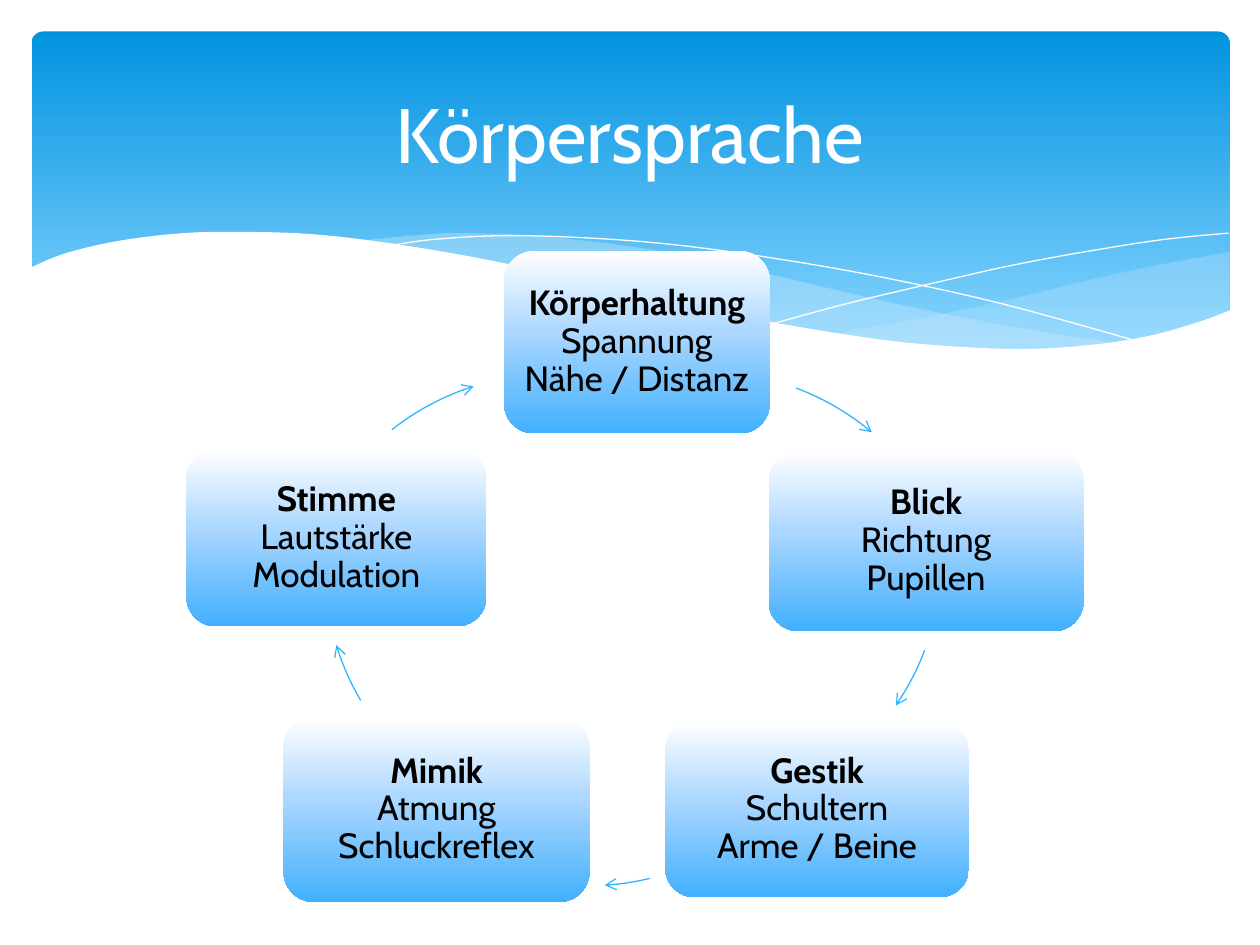
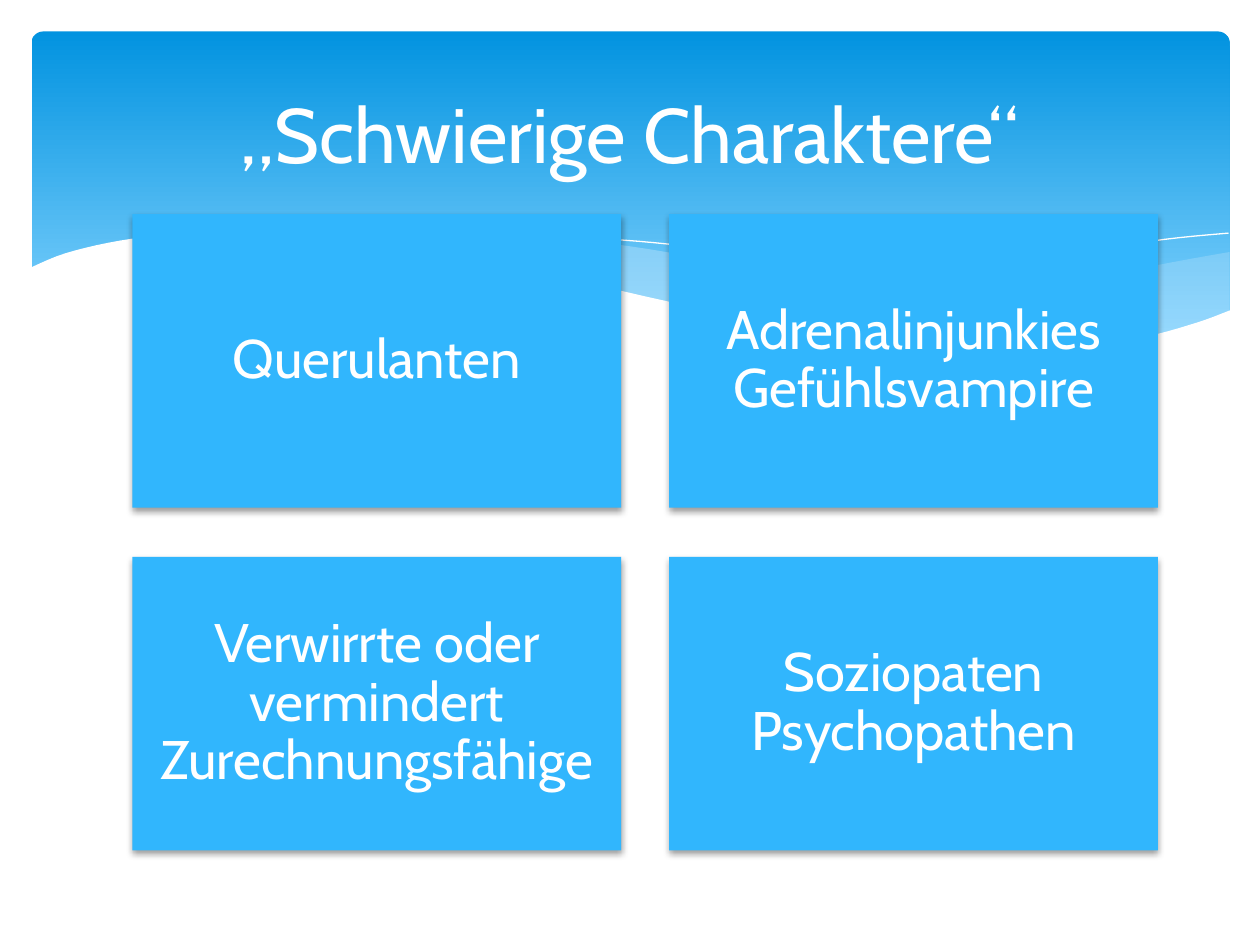
import dataclasses
import math

import lxml.etree
import pptx
import pptx.dml.color
import pptx.enum.shapes
import pptx.enum.text
import pptx.oxml.ns
import pptx.util

Inches = pptx.util.Inches
Pt = pptx.util.Pt
SHAPE = pptx.enum.shapes.MSO_SHAPE
qn = pptx.oxml.ns.qn


@dataclasses.dataclass(frozen=True)
class Theme:
    font: str = "Cabin"
    white: str = "FFFFFF"
    black: str = "000000"
    blue: str = "31B6FD"
    veil: str = "C6E7FC"
    band_stops: tuple = ((0, "0293E0"), (90, "83D3FE"))
    card_stops: tuple = ((0, "FFFFFF"), (44, "ACD7FF"), (100, "42B0FD"))
    title_size: int = 44
    tile_size: int = 31
    card_size: int = 20


THEME = Theme()

# Curves of the header, as points in inches from left to right
WAVE_EDGE = [(0.23, 2.13), (0.52, 2.01), (0.95, 1.91), (1.46, 1.85), (1.93, 1.84),
             (2.5, 1.86), (3.16, 1.94), (3.91, 2.07), (4.47, 2.2), (5.29, 2.39),
             (6.03, 2.54), (6.88, 2.68), (7.44, 2.74), (8.09, 2.77), (8.63, 2.74),
             (9.1, 2.67), (9.5, 2.56), (9.77, 2.46)]
RIGHT_VEIL_TOP = [(6.61, 2.65), (7.29, 2.53), (8.05, 2.37), (8.61, 2.23),
                  (9.21, 2.1), (9.76, 2)]
RIGHT_VEIL_BOTTOM = [(6.61, 2.65), (7.19, 2.72), (7.69, 2.77), (8.14, 2.78),
                     (8.63, 2.75), (9.05, 2.69), (9.42, 2.59), (9.76, 2.47)]
LONG_VEIL_TOP = [(2.86, 1.91), (3.28, 1.87), (3.61, 1.85), (4.2, 1.87), (4.89, 1.94),
                 (5.55, 2.05), (6.29, 2.22), (7.06, 2.4), (7.75, 2.54), (8.37, 2.65),
                 (8.93, 2.73)]
LONG_VEIL_BOTTOM = [(2.86, 1.91), (3.42, 1.99), (4.04, 2.11), (4.49, 2.22), (5.3, 2.4),
                    (6.01, 2.55), (6.65, 2.66), (7.22, 2.74), (7.73, 2.77),
                    (8.28, 2.78), (8.93, 2.73)]
FALLING_LINE = [(3.09, 1.95), (3.44, 1.9), (4.01, 1.87), (4.69, 1.89), (5.33, 1.94),
                (6.08, 2.04), (6.95, 2.19), (7.95, 2.41), (9.07, 2.72)]
RISING_LINE = [(6.13, 2.57), (6.72, 2.41), (7.48, 2.23), (8.06, 2.1), (8.66, 1.99),
               (9.24, 1.9), (9.75, 1.85)]

CARDS = [
    ("Körperhaltung", "Spannung\vNähe / Distanz", (4, 1.99, 2.11, 1.45)),
    ("Blick", "Richtung\vPupillen", (6.1, 3.58, 2.5, 1.43)),
    ("Gestik", "Schultern\vArme / Beine", (5.28, 5.73, 2.41, 1.39)),
    ("Mimik", "Atmung\vSchluckreflex", (2.25, 5.69, 2.43, 1.47)),
    ("Stimme", "Lautstärke\vModulation", (1.48, 3.57, 2.38, 1.4)),
]
ARROW_RADIUS = 2.05
# Centre of the circle, start and end of each arrow
ARROWS = [
    ((5.6, 5), (6.32, 3.08), (6.92, 3.43)),
    ((5.42, 4.44), (7.34, 5.16), (7.11, 5.6)),
    ((4.67, 4.98), (5.16, 6.98), (4.8, 7.03)),
    ((4.63, 4.52), (2.86, 5.56), (2.67, 5.12)),
    ((4.38, 5.02), (3.11, 3.41), (3.76, 3.07)),
]
TILES = ["Querulanten", "Adrenalinjunkies\vGefühlsvampire",
         "Verwirrte oder vermindert Zurechnungsfähige", "Soziopaten\vPsychopathen"]


def rgb(color):
    return pptx.dml.color.RGBColor.from_string(color)


def add_xml(parent, tag, **attributes):
    values = {name: str(value) for name, value in attributes.items()}
    return lxml.etree.SubElement(parent, qn(tag), values)


def add_text(tf, text, size, color=THEME.white, bold=False, spacing=None, margin=None):
    """Append a centred run to the first paragraph; \\v breaks the line."""
    tf.word_wrap = True
    tf.auto_size = pptx.enum.text.MSO_AUTO_SIZE.NONE
    tf.vertical_anchor = pptx.enum.text.MSO_ANCHOR.MIDDLE
    if margin is not None:
        tf.margin_left = tf.margin_right = Inches(margin)
        tf.margin_top = tf.margin_bottom = Inches(margin)
    p = tf.paragraphs[0]
    p.alignment = pptx.enum.text.PP_ALIGN.CENTER
    p.line_spacing = spacing
    for i, line in enumerate(text.split("\v")):
        if i:
            p.add_line_break()
        r = p.add_run()
        r.text = line
        r.font.name = THEME.font
        r.font.size = Pt(size)
        r.font.bold = bold
        r.font.color.rgb = rgb(color)


def fill_solid(sp, color, opacity=100):
    sp.fill.solid()
    sp.fill.fore_color.rgb = rgb(color)
    if opacity < 100:
        clr = sp.element.spPr.find(qn("a:solidFill")).find(qn("a:srgbClr"))
        add_xml(clr, "a:alpha", val=opacity * 1000)


def fill_gradient(sp, stops):
    """Fill from top to bottom with (percent, colour) stops."""
    sp.fill.gradient()
    sp.fill.gradient_angle = 270
    stop_list = sp.element.spPr.find(qn("a:gradFill")).find(qn("a:gsLst"))
    for stop in list(stop_list):
        stop_list.remove(stop)
    for percent, color in stops:
        stop = add_xml(stop_list, "a:gs", pos=percent * 1000)
        add_xml(stop, "a:srgbClr", val=color)


def add_shape(s, kind, box):
    sp = s.shapes.add_shape(kind, *[Inches(v) for v in box])
    sp.shadow.inherit = False
    sp.line.fill.background()
    return sp


def smooth(points, steps=5):
    """Catmull-Rom curve through the points."""
    padded = [points[0], *points, points[-1]]
    curve = [points[0]]
    for a, b, c, d in zip(padded, padded[1:], padded[2:], padded[3:]):
        for t in (i / steps for i in range(1, steps + 1)):
            curve.append(tuple(
                (2 * q + (r - p) * t + (2 * p - 5 * q + 4 * r - u) * t ** 2
                 + (3 * q - p - 3 * r + u) * t ** 3) / 2
                for p, q, r, u in zip(a, b, c, d)))
    return curve


def add_outline(s, points, close):
    start, *rest = [(Inches(x), Inches(y)) for x, y in points]
    builder = s.shapes.build_freeform(*start)
    builder.add_line_segments(rest, close=close)
    sp = builder.convert_to_shape()
    sp.shadow.inherit = False
    return sp


def add_area(s, points, color, opacity=100):
    sp = add_outline(s, points, close=True)
    fill_solid(sp, color, opacity)
    sp.line.fill.background()


def add_curve(s, points, color, width):
    sp = add_outline(s, points, close=False)
    sp.fill.background()
    sp.line.color.rgb = rgb(color)
    sp.line.width = Pt(width)
    return sp


def add_arc_arrow(s, center, start, end, steps=12):
    first, last = [math.atan2(y - center[1], x - center[0]) for x, y in (start, end)]
    sweep = (last - first) % math.tau
    angles = [first + sweep * i / steps for i in range(steps + 1)]
    points = [(center[0] + ARROW_RADIUS * math.cos(a),
               center[1] + ARROW_RADIUS * math.sin(a)) for a in angles]
    sp = add_curve(s, points, THEME.blue, 0.75)
    add_xml(sp.line.fill and sp.element.spPr.find(qn("a:ln")), "a:tailEnd", type="arrow")


def add_card(s, heading, details, box):
    sp = add_shape(s, SHAPE.ROUNDED_RECTANGLE, box)
    fill_gradient(sp, THEME.card_stops)
    style = dict(size=THEME.card_size, color=THEME.black, spacing=0.9, margin=0.06)
    add_text(sp.text_frame, heading, bold=True, **style)
    sp.text_frame.paragraphs[0].add_line_break()
    add_text(sp.text_frame, details, **style)


def add_tile(s, text, box):
    sp = add_shape(s, SHAPE.RECTANGLE, box)
    fill_solid(sp, THEME.blue)
    effects = sp.element.spPr.find(qn("a:effectLst"))
    shadow = add_xml(effects, "a:outerShdw", blurRad=Pt(4), dist=Pt(2),
                     dir=90 * 60000, rotWithShape=0)
    add_xml(add_xml(shadow, "a:srgbClr", val=THEME.black), "a:alpha", val=38000)
    add_text(sp.text_frame, text, THEME.tile_size, spacing=0.9, margin=0.13)


def draw_header(s):
    band = add_shape(s, SHAPE.ROUNDED_RECTANGLE, (0.25, 0.25, 9.51, 2.7))
    band.adjustments[0] = 0.034
    fill_gradient(band, THEME.band_stops)
    for top, bottom, opacity in ((RIGHT_VEIL_TOP, RIGHT_VEIL_BOTTOM, 29),
                                 (LONG_VEIL_TOP, LONG_VEIL_BOTTOM, 40)):
        add_area(s, smooth(top) + smooth(bottom)[::-1], THEME.veil, opacity)
    for points in (FALLING_LINE, RISING_LINE):
        add_curve(s, smooth(points), THEME.white, 0)
    add_area(s, smooth(WAVE_EDGE) + [(9.77, 3.29), (0.23, 3.29)], THEME.white)


def move_to_layout(s):
    """Put all non-placeholder shapes of the slide behind its layout."""
    tree = s.slide_layout.shapes.element
    drawn = [sp for sp in s.shapes if not sp.is_placeholder]
    for i, sp in enumerate(drawn):
        sp.element.nvSpPr.cNvPr.set("id", str(100 + i))
        tree.insert(2 + i, sp.element)


def add_slide(prs, layout, title):
    s = prs.slides.add_slide(layout)
    sp = s.shapes.title
    sp.left, sp.top, sp.width, sp.height = [Inches(v) for v in (0.5, 0.37, 9, 1.37)]
    add_text(sp.text_frame, title, THEME.title_size)
    return s


def main():
    prs = pptx.Presentation()
    prs.slide_width, prs.slide_height = Inches(10), Inches(7.5)
    layout = prs.slide_layouts.get_by_name("Title Only")

    s = add_slide(prs, layout, "Körpersprache")
    draw_header(s)
    move_to_layout(s)
    for card in CARDS:
        add_card(s, *card)
    for arrow in ARROWS:
        add_arc_arrow(s, *arrow)

    s = add_slide(prs, layout, "„Schwierige Charaktere“")
    for i, text in enumerate(TILES):
        row, column = divmod(i, 2)
        add_tile(s, text, (1.05 + 4.26 * column, 1.7 + 2.72 * row, 3.88, 2.33))

    prs.save("out.pptx")


if __name__ == "__main__":
    main()
